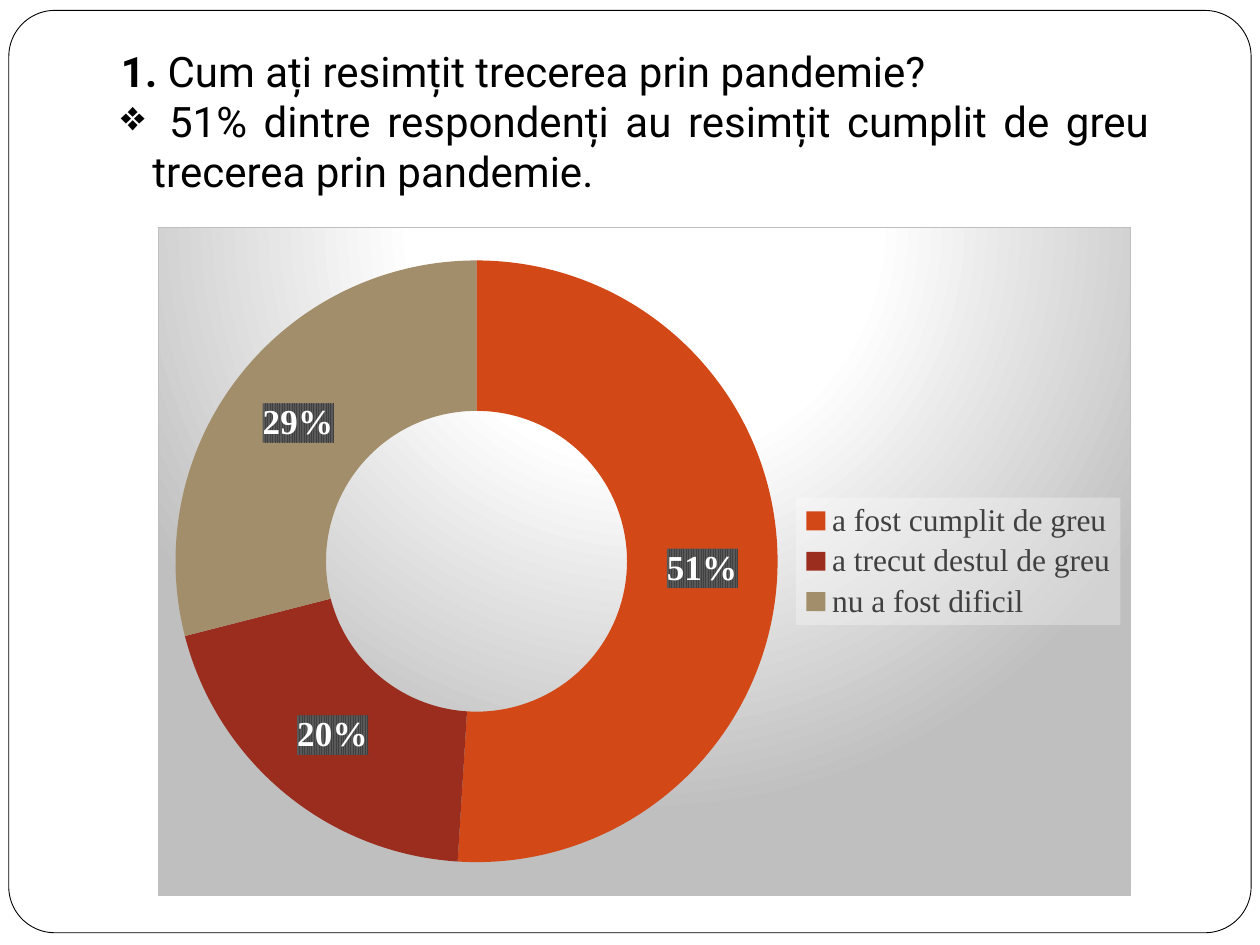
from lxml import etree
from pptx import Presentation
from pptx import util as u
from pptx.chart.data import CategoryChartData
from pptx.dml.color import RGBColor
from pptx.enum import chart as ch, shapes, text
from pptx.oxml import parse_xml
from pptx.oxml.ns import nsdecls, qn

WIDE, HIGH = 10, 7.5
HUES = {"ink": "000000", "paper": "FFFFFF", "edge": "BFBFBF", "grey": "404040",
        "dark": "595959"}
HEAD = [
    ("buAutoNum", {"type": "arabicPeriod"}, "Cum ați resimțit trecerea prin pandemie?"),
    ("buChar", {"char": "❖"},
     "51% dintre respondenți au resimțit cumplit de greu trecerea prin pandemie."),
]
VOTES = [
    ("a fost cumplit de greu", 51, "D34817"),
    ("a trecut destul de greu", 20, "9B2D1F"),
    ("nu a fost dificil", 29, "A28E6A"),
]
SERIF = "Times New Roman"


def rgb(name):
    return RGBColor.from_string(HUES.get(name, name))


def share(left, top, wide, high):
    """Turn shares of the slide's size into lengths."""
    return [u.Inches(part * size) for part, size in
            zip((left, top, wide, high), (WIDE, HIGH, WIDE, HIGH))]


def style(font, face, size, hue, bold=False):
    font.name, font.size, font.bold = face, u.Pt(size), bold
    font.color.rgb = rgb(hue)


def color(name, extra=""):
    return f'<a:srgbClr val="{HUES[name]}">{extra}</a:srgbClr>'


def box(inner):
    """Make the shape properties of a chart part."""
    return parse_xml(f'<c:spPr {nsdecls("c", "a")}>{inner}</c:spPr>')


def add_frame(slide):
    frame = slide.shapes.add_shape(shapes.MSO_SHAPE.ROUNDED_RECTANGLE,
                                   *share(0.007, 0.011, 0.986, 0.976))
    frame.adjustments[0] = 0.05
    frame.shadow.inherit = False
    frame.fill.solid()
    frame.fill.fore_color.rgb = rgb("paper")
    frame.line.color.rgb = rgb("ink")
    frame.line.width = u.Pt(0.5)
    tree = slide.shapes.title.element.getparent()
    tree.insert(2, frame.element)


def fill_title(title):
    title.left, title.top, title.width, title.height = share(0.086, 0.041, 0.836, 0.256)
    body = title.text_frame
    body.word_wrap = True
    body.auto_size = text.MSO_AUTO_SIZE.NONE
    body.vertical_anchor = text.MSO_ANCHOR.TOP
    for row, (tag, attrs, words) in enumerate(HEAD):
        para = body.add_paragraph() if row else body.paragraphs[0]
        para.alignment = text.PP_ALIGN.JUSTIFY
        for part, bold in ((" ", True), (words, False)):
            run = para.add_run()
            run.text = part
            style(run.font, "Roboto", 24, "ink", bold)
        props = para._p.get_or_add_pPr()
        props.set("marL", str(u.Inches(0.25)))
        props.set("indent", str(-u.Inches(0.25)))
        etree.SubElement(props, qn(f"a:{tag}"), attrs)


def add_ring(slide):
    data = CategoryChartData()
    data.categories = [name for name, _, _ in VOTES]
    data.add_series("Series 1", [count for _, count, _ in VOTES])
    chart = slide.shapes.add_chart(ch.XL_CHART_TYPE.DOUGHNUT,
                                   *share(0.125, 0.24, 0.773, 0.708), data).chart
    chart.has_title = False
    style(chart.font, SERIF, 10, "ink")

    plot = chart.plots[0]
    plot.vary_by_categories = True
    plot._element.find(qn("c:holeSize")).set("val", "50")
    ring = plot.series[0]
    for spot, (_, _, hue) in enumerate(VOTES):
        fill = ring.points[spot].format.fill
        fill.solid()
        fill.fore_color.rgb = rgb(hue)

    tags = ring.data_labels
    tags.show_percentage, tags.show_value = True, False
    tags.number_format, tags.number_format_is_linked = "0%", False
    style(tags.font, SERIF, 20, "paper", True)
    tags._element.find(qn("c:txPr")).addprevious(box(
        f'<a:pattFill prst="narVert"><a:fgClr>{color("grey")}</a:fgClr>'
        f'<a:bgClr>{color("dark")}</a:bgClr></a:pattFill>'))

    chart.has_legend = True
    key = chart.legend
    key.position = ch.XL_LEGEND_POSITION.RIGHT
    key.include_in_layout = False
    style(key.font, SERIF, 18, "grey")
    veil = color("paper", '<a:alpha val="30000"/>')
    key._element.find(qn("c:txPr")).addprevious(
        box(f"<a:solidFill>{veil}</a:solidFill>"))

    stops = "".join(f'<a:gs pos="{pos}000">{color(hue)}</a:gs>'
                    for pos, hue in ((0, "paper"), (39, "paper"), (100, "edge")))
    chart._chartSpace.find(qn("c:chart")).addnext(box(
        f'<a:gradFill><a:gsLst>{stops}</a:gsLst><a:path path="circle">'
        '<a:fillToRect l="50000" t="-80000" r="50000" b="180000"/></a:path></a:gradFill>'
        f'<a:ln w="{u.Pt(0.75)}"><a:solidFill>{color("edge")}</a:solidFill></a:ln>'))


def main():
    deck = Presentation()
    deck.slide_width, deck.slide_height = u.Inches(WIDE), u.Inches(HIGH)
    slide = deck.slides.add_slide(deck.slide_layouts[5])
    add_frame(slide)
    fill_title(slide.shapes.title)
    add_ring(slide)
    deck.save("out.pptx")


if __name__ == "__main__":
    main()
